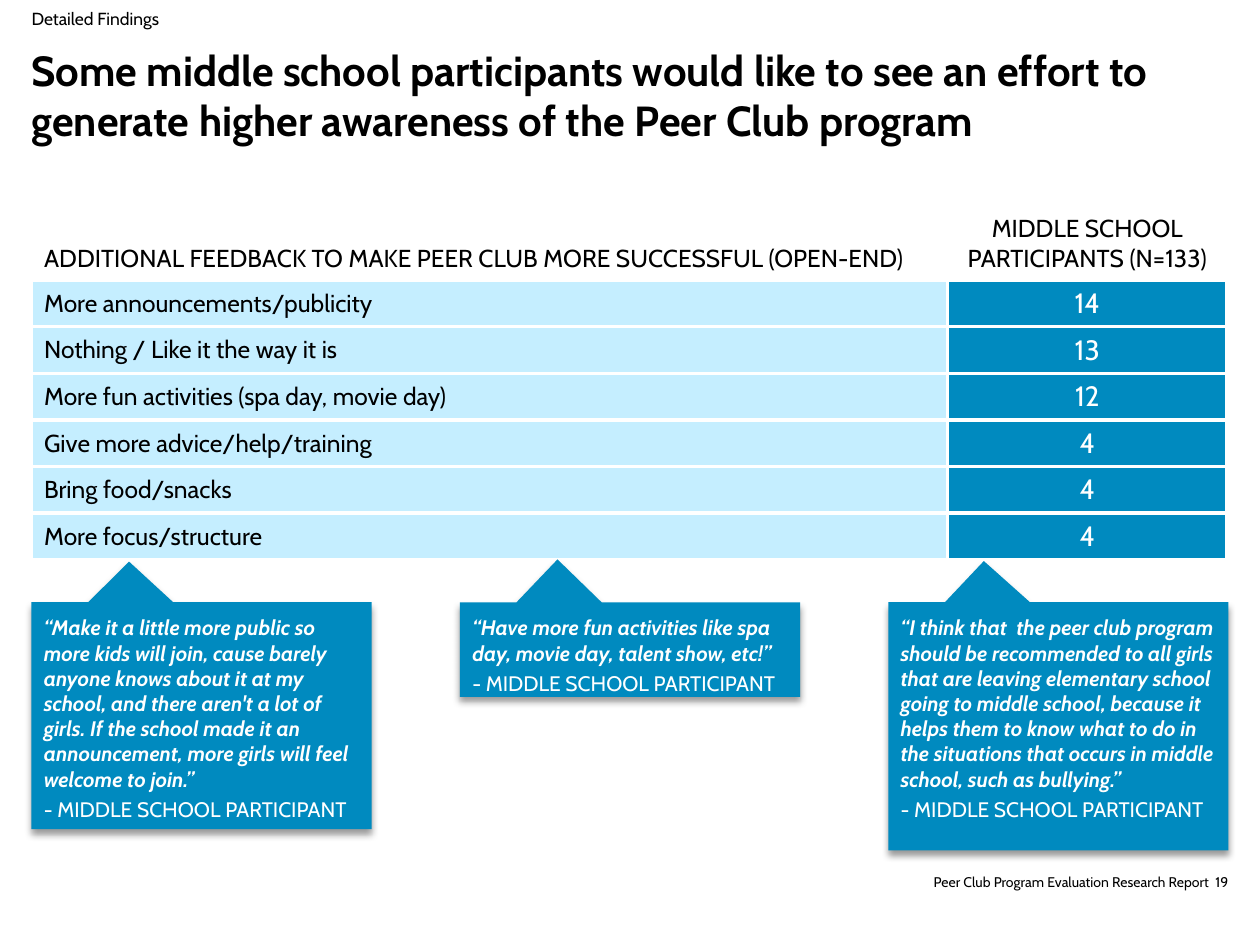
from dataclasses import dataclass
from lxml.etree import SubElement
from pptx import Presentation
from pptx.dml.color import RGBColor
from pptx.enum.shapes import MSO_SHAPE
from pptx.enum.text import MSO_ANCHOR, MSO_AUTO_SIZE, PP_ALIGN
from pptx.oxml import parse_xml
from pptx.oxml.ns import nsdecls, qn
from pptx.util import Inches, Pt


@dataclass(frozen=True)
class Theme:
    font: str = "Cabin"
    black: str = "000000"
    white: str = "FFFFFF"
    blue: str = "008ABF"
    pale: str = "C5EEFF"
    title: int = 24
    count: int = 16
    label: int = 14
    quote: int = 12
    head: int = 10
    foot: int = 8


THEME = Theme()

ROWS = [
    ("More announcements/publicity", 14),
    ("Nothing / Like it the way it is", 13),
    ("More fun activities (spa day, movie day)", 12),
    ("Give more advice/help/training", 4),
    ("Bring food/snacks", 4),
    ("More focus/structure", 4),
]

QUOTES = [
    (1.8, -0.213, -0.679,
     "“Make it a little more public so more kids will join, cause barely "
     "anyone knows about it at my school, and there aren't a lot of girls. "
     "If the school made it an announcement, more girls will feel welcome "
     "to join.”"),
    (0.75, -0.213, -0.954,
     "“Have more fun activities like spa day, movie day, talent show, etc!”"),
    (1.97, -0.219, -0.666,
     "“I think that  the peer club program should be recommended to all "
     "girls that are leaving elementary school going to middle school, "
     "because it helps them to know what to do in the situations that "
     "occurs in middle school, such as bullying.”"),
]


def style(para, size, color, bold=False, slant=False, align=PP_ALIGN.LEFT):
    para.alignment = align
    for run in para.runs:
        font = run.font
        font.name = THEME.font
        font.size = Pt(size)
        font.bold = bold
        font.italic = slant
        font.color.rgb = RGBColor.from_string(color)


def inset(frame, gap, anchor):
    frame.word_wrap = True
    frame.auto_size = MSO_AUTO_SIZE.NONE
    frame.vertical_anchor = anchor
    frame.margin_left = frame.margin_right = Inches(gap)
    frame.margin_top = frame.margin_bottom = Inches(gap)


def add_title(slide, text):
    title = slide.shapes.title
    title.left, title.top = Inches(0.25), Inches(0.25)
    title.width, title.height = Inches(9.55), Inches(1)
    frame = title.text_frame
    inset(frame, 0, MSO_ANCHOR.MIDDLE)
    frame.text = text
    style(frame.paragraphs[0], THEME.title, THEME.black, bold=True)


def add_note(slide, box, text, size, align=PP_ALIGN.LEFT,
             anchor=MSO_ANCHOR.MIDDLE):
    frame = slide.shapes.add_textbox(*map(Inches, box)).text_frame
    inset(frame, 0, anchor)
    frame.text = text
    style(frame.paragraphs[0], size, THEME.black, align=align)


def add_lines(cell):
    props = cell._tc.get_or_add_tcPr()
    for spot, side in enumerate(("lnL", "lnR", "lnT", "lnB")):
        props.insert(spot, parse_xml(
            f'<a:{side} {nsdecls("a")} w="{Pt(2.25)}"><a:solidFill>'
            f'<a:srgbClr val="{THEME.white}"/></a:solidFill></a:{side}>'))


def fill_cell(cell, text, fill, color, size, align, anchor):
    cell.fill.solid()
    cell.fill.fore_color.rgb = RGBColor.from_string(fill)
    cell.vertical_anchor = anchor
    cell.text = text
    style(cell.text_frame.paragraphs[0], size, color, align=align)
    add_lines(cell)


def add_grid(slide):
    table = slide.shapes.add_table(
        len(ROWS) + 1, 2, Inches(0.25), Inches(1.65),
        Inches(9.49), Inches(2.79)).table
    table.columns[0].width = Inches(7.27)
    table.columns[1].width = Inches(2.22)
    heads = ("ADDITIONAL FEEDBACK TO MAKE PEER CLUB MORE SUCCESSFUL (OPEN-END)",
             "MIDDLE SCHOOL PARTICIPANTS (N=133)")
    sides = (PP_ALIGN.LEFT, PP_ALIGN.CENTER)
    table.rows[0].height = Inches(0.57)
    for col, (text, side) in enumerate(zip(heads, sides)):
        fill_cell(table.cell(0, col), text, THEME.white, THEME.black,
                  THEME.label, side, MSO_ANCHOR.BOTTOM)
    for row, (label, count) in enumerate(ROWS, 1):
        table.rows[row].height = Inches(0.37)
        fill_cell(table.cell(row, 0), label, THEME.pale, THEME.black,
                  THEME.label, sides[0], MSO_ANCHOR.MIDDLE)
        fill_cell(table.cell(row, 1), str(count), THEME.blue, THEME.white,
                  THEME.count, sides[1], MSO_ANCHOR.MIDDLE)


def add_shade(shape):
    shape.shadow.inherit = False
    glow = shape._element.spPr.find(qn("a:effectLst"))
    shade = SubElement(glow, qn("a:outerShdw"), blurRad=str(Pt(4)),
                       dist=str(Pt(3)), dir="5400000", rotWithShape="0")
    tint = SubElement(shade, qn("a:srgbClr"), val=THEME.black)
    SubElement(tint, qn("a:alpha"), val="40000")


def add_quote(slide, left, high, tip_x, tip_y, text):
    shape = slide.shapes.add_shape(
        MSO_SHAPE.RECTANGULAR_CALLOUT, Inches(left), Inches(4.78),
        Inches(2.7), Inches(high))
    shape.adjustments[0] = tip_x
    shape.adjustments[1] = tip_y
    shape.fill.solid()
    shape.fill.fore_color.rgb = RGBColor.from_string(THEME.blue)
    shape.line.fill.background()
    add_shade(shape)
    frame = shape.text_frame
    inset(frame, 0.1, MSO_ANCHOR.TOP)
    frame.text = text
    style(frame.paragraphs[0], THEME.quote, THEME.white, bold=True, slant=True)
    source = frame.add_paragraph()
    source.text = "- MIDDLE SCHOOL PARTICIPANT"
    source.space_before = Pt(3)
    style(source, THEME.quote, THEME.white)


def main():
    deck = Presentation()
    deck.slide_width, deck.slide_height = Inches(10), Inches(7.5)
    slide = deck.slides.add_slide(deck.slide_layouts[5])
    add_title(slide, "Some middle school participants would like to see an "
                     "effort to generate higher awareness of the Peer Club "
                     "program")
    add_grid(slide)
    add_note(slide, (0.25, 0.06, 3.35, 0.17), "Detailed Findings",
             THEME.head, anchor=MSO_ANCHOR.TOP)
    add_note(slide, (9.49, 6.75, 0.26, 0.5), "19", THEME.foot, PP_ALIGN.RIGHT)
    add_note(slide, (6.43, 6.75, 3.17, 0.5),
             "Peer Club Program Evaluation Research Report",
             THEME.foot, PP_ALIGN.RIGHT)
    for spot, quote in enumerate(QUOTES):
        add_quote(slide, 0.25 + 3.4 * spot, *quote)
    deck.save("out.pptx")


if __name__ == "__main__":
    main()
